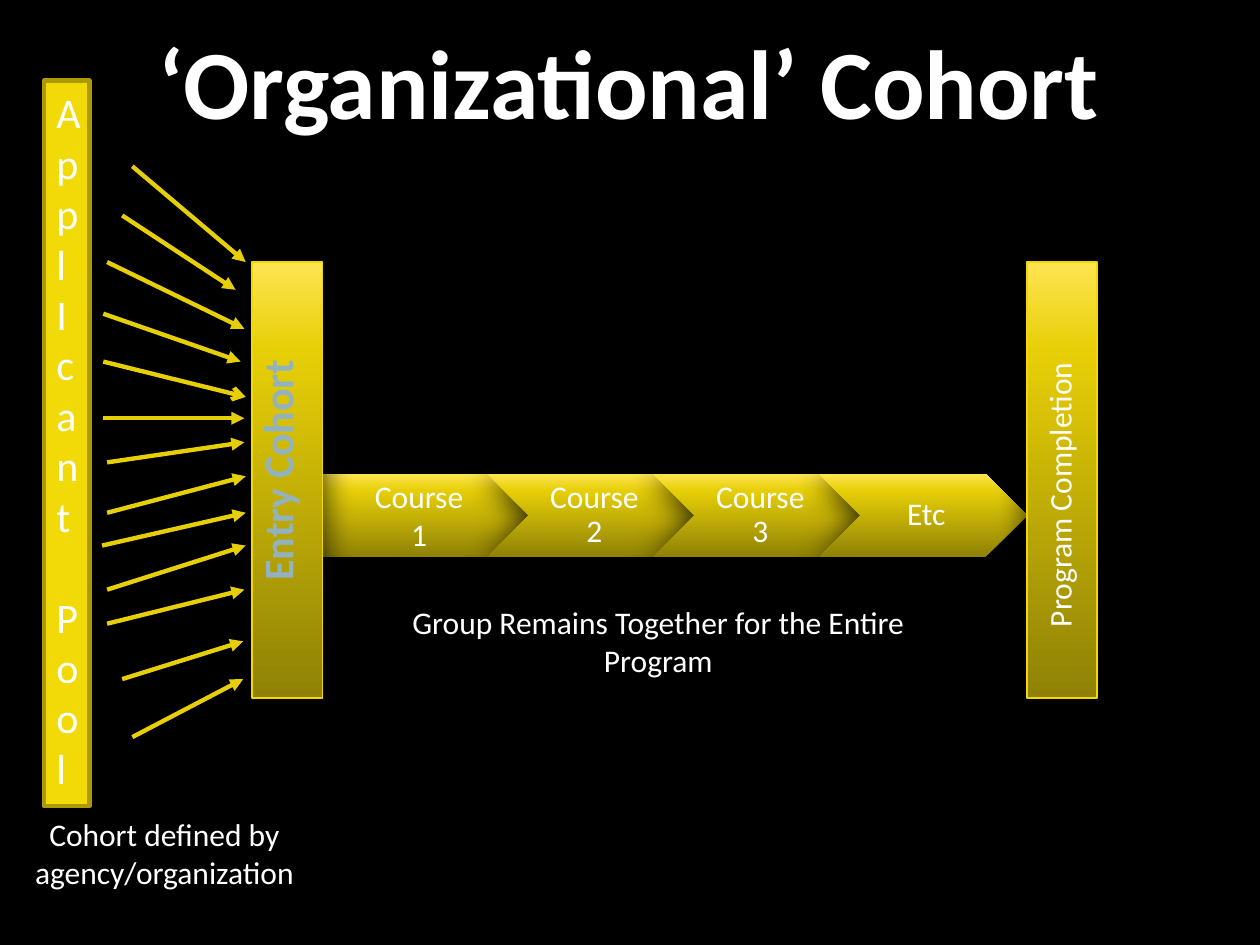
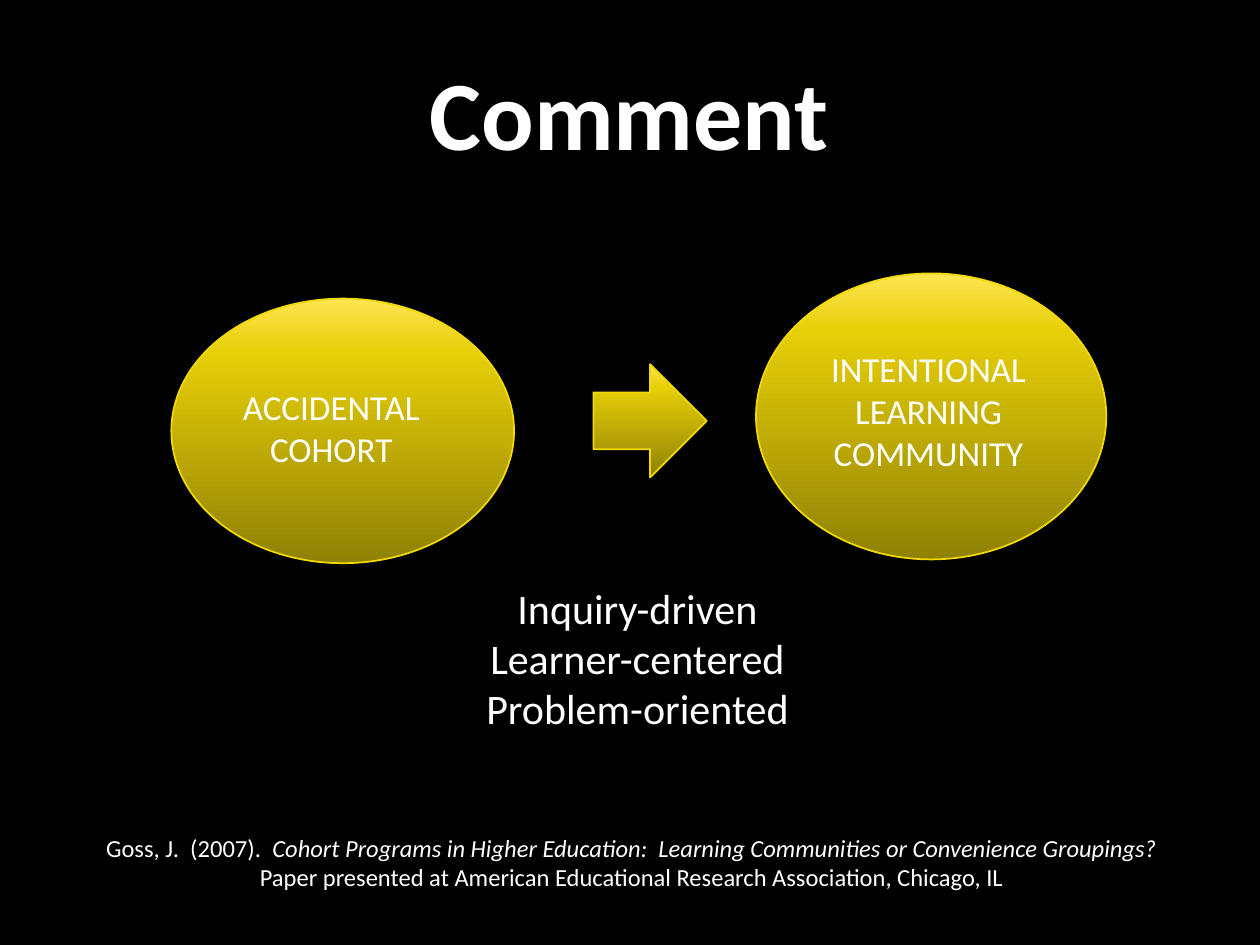
from dataclasses import dataclass
from typing import NamedTuple, Optional

from lxml.etree import SubElement
from pptx import Presentation
from pptx.dml.color import RGBColor
from pptx.enum.shapes import MSO_CONNECTOR, MSO_SHAPE
from pptx.enum.text import MSO_ANCHOR, MSO_AUTO_SIZE, PP_ALIGN
from pptx.oxml import parse_xml
from pptx.oxml.ns import nsdecls, qn
from pptx.util import Inches, Pt

# The page is a grid of 100 columns by 75 rows
WIDTH, HEIGHT = Inches(10), Inches(7.5)
COLUMNS, ROWS = 100, 75


@dataclass(frozen=True)
class Theme:
    font: str = "Calibri"
    background: str = "000000"
    text: str = "FFFFFF"
    accent_text: str = "92B3BE"
    accent_outline: str = "BDD4CB"
    gradient: tuple = ((0, "8F8105"), (80, "E7CF08"), (100, "FFE552"))
    edge: str = "F2D902"
    arrow: str = "E7CF08"
    pool_fill: str = "F2D908"
    pool_edge: str = "AB9A06"
    title_size: int = 56
    large: int = 24
    medium: int = 20
    body: int = 18
    small: int = 14
    thin: float = 1
    thick: float = 2.5


THEME = Theme()


class Area(NamedTuple):
    column: float
    row: float
    columns: float
    rows: float

    def lengths(self) -> tuple:
        return (x_of(self.column), y_of(self.row),
                x_of(self.columns), y_of(self.rows))


class Span(NamedTuple):
    text: str
    italic: bool = False


@dataclass(frozen=True)
class Label:
    area: Area
    paras: tuple  # each para is a string or a tuple of spans
    size: int = THEME.body
    color: str = THEME.text
    bold: bool = False
    align: PP_ALIGN = PP_ALIGN.CENTER
    anchor: MSO_ANCHOR = MSO_ANCHOR.TOP
    left_inset: float = 0.1
    right_inset: float = 0.1
    rotation: int = 0
    line_spacing: float = 1.0
    last_gap: float = 0  # points before the last para
    grow: bool = True


@dataclass(frozen=True)
class Block:
    kind: MSO_SHAPE
    area: Area
    edged: bool = True


class Arrow(NamedTuple):
    start: tuple
    end: tuple
    head: str = "triangle"


def x_of(column: float) -> int:
    return round(WIDTH * column / COLUMNS)


def y_of(row: float) -> int:
    return round(HEIGHT * row / ROWS)


def rgb(color: str) -> RGBColor:
    return RGBColor.from_string(color)


# Drawing functions

def write(shape, label: Label) -> None:
    frame = shape.text_frame
    frame.word_wrap = True
    frame.auto_size = (MSO_AUTO_SIZE.SHAPE_TO_FIT_TEXT if label.grow
                       else MSO_AUTO_SIZE.NONE)
    frame.vertical_anchor = label.anchor
    frame.margin_left = Inches(label.left_inset)
    frame.margin_right = Inches(label.right_inset)
    for index, content in enumerate(label.paras):
        para = frame.add_paragraph() if index else frame.paragraphs[0]
        para.alignment = label.align
        para.line_spacing = label.line_spacing
        if label.last_gap and index == len(label.paras) - 1:
            para.space_before = Pt(label.last_gap)
        spans = (Span(content),) if isinstance(content, str) else content
        for span in spans:
            run = para.add_run()
            run.text = span.text
            run.font.name = THEME.font
            run.font.size = Pt(label.size)
            run.font.bold = label.bold
            run.font.italic = span.italic
            run.font.color.rgb = rgb(label.color)


def add_label(page, label: Label):
    box = page.shapes.add_textbox(*label.area.lengths())
    box.rotation = label.rotation
    write(box, label)
    return box


def add_title(page, text: str, area: Area) -> None:
    add_label(page, Label(area, (text,), THEME.title_size, bold=True,
                          anchor=MSO_ANCHOR.MIDDLE, grow=False))


def add_block(page, block: Block) -> None:
    shape = page.shapes.add_shape(block.kind, *block.area.lengths())
    if block.edged:
        shape.line.color.rgb = rgb(THEME.edge)
        shape.line.width = Pt(THEME.thin)
    else:
        shape.line.fill.background()

    # Three-stop gradient, dark at the bottom
    shape.fill.background()
    properties = shape._element.spPr
    stops = "".join(
        f'<a:gs pos="{place * 1000}"><a:srgbClr val="{color}"/></a:gs>'
        for place, color in THEME.gradient)
    properties.replace(properties.find(qn("a:noFill")), parse_xml(
        f'<a:gradFill {nsdecls("a")} rotWithShape="1"><a:gsLst>{stops}'
        '</a:gsLst><a:lin ang="16200000" scaled="0"/></a:gradFill>'))

    # Soft shadow below
    shape.shadow.inherit = False
    properties.find(qn("a:effectLst")).append(parse_xml(
        f'<a:outerShdw {nsdecls("a")} blurRad="{Pt(18)}" dist="{Pt(3)}" '
        'dir="5400000" rotWithShape="0"><a:srgbClr val="000000">'
        '<a:alpha val="80000"/></a:srgbClr></a:outerShdw>'))


def add_arrow(page, arrow: Arrow) -> None:
    (x1, y1), (x2, y2) = arrow.start, arrow.end
    connector = page.shapes.add_connector(
        MSO_CONNECTOR.STRAIGHT, x_of(x1), y_of(y1), x_of(x2), y_of(y2))
    connector.line.color.rgb = rgb(THEME.arrow)
    connector.line.width = Pt(THEME.thick)
    properties = connector._element.spPr
    SubElement(properties.find(qn("a:ln")), qn("a:tailEnd"), type=arrow.head)
    SubElement(properties, qn("a:effectLst"))


def outline_text(box, color: str) -> None:
    for para in box.text_frame.paragraphs:
        for run in para.runs:
            run.font._element.insert(0, parse_xml(
                f'<a:ln {nsdecls("a")} w="{Pt(THEME.thin)}"><a:solidFill>'
                f'<a:srgbClr val="{color}"/></a:solidFill></a:ln>'))


def add_page(deck):
    page = deck.slides.add_slide(deck.slide_layouts[6])
    page.background.fill.solid()
    page.background.fill.fore_color.rgb = rgb(THEME.background)
    return page


# Slide 1: applicants enter one cohort and move through the courses

COURSE_LEFT, COURSE_TOP, COURSE_STEP = 25.5, 37.6, 13.17
COURSE_WIDTH, COURSE_HEIGHT = 16.5, 6.6
COURSES = (("Course", "1"), ("Course 2",), ("Course 3",), ("Etc",))

ARROWS = (
    Arrow((10.5, 13.2), (19.5, 20.8)),
    Arrow((9.7, 17.1), (18.7, 23)),
    Arrow((8.5, 20.8), (19.4, 26.1)),
    Arrow((8.2, 24.9), (19.1, 28.7)),
    Arrow((8.2, 28.7), (19.5, 31.5), "arrow"),
    Arrow((8.2, 33.2), (19.4, 33.2)),
    Arrow((8.5, 36.7), (19.4, 35.1)),
    Arrow((8.5, 40.7), (19.5, 37.8)),
    Arrow((8.1, 43.3), (19.5, 40.7)),
    Arrow((8.5, 46.8), (19.5, 43.3)),
    Arrow((8.5, 49.5), (19.4, 46.8)),
    Arrow((9.7, 53.9), (19.3, 50.9)),
    Arrow((10.5, 58.5), (19.3, 53.9)),
)


def add_courses(page) -> None:
    notch = COURSE_HEIGHT / 2
    for index, paras in enumerate(COURSES):
        left = COURSE_LEFT + index * COURSE_STEP
        kind = MSO_SHAPE.CHEVRON if index else MSO_SHAPE.PENTAGON
        add_block(page, Block(kind, Area(left, COURSE_TOP, COURSE_WIDTH,
                                         COURSE_HEIGHT), edged=False))
        text_left = left + notch if index else left
        text_width = COURSE_WIDTH - notch * (2 if index else 0.5)
        add_label(page, Label(
            Area(text_left, COURSE_TOP, text_width, COURSE_HEIGHT), paras,
            anchor=MSO_ANCHOR.MIDDLE, left_inset=0.08 if index else 0.1,
            right_inset=0.03, line_spacing=0.9 if index else 1.0, grow=False))


def add_pool(page) -> None:
    label = Label(Area(3.5, 6.4, 3.6, 57.6), ("Appl", "Icant", "Pool"),
                  THEME.large, align=PP_ALIGN.LEFT, last_gap=29)
    pool = page.shapes.add_shape(MSO_SHAPE.RECTANGLE, *label.area.lengths())
    pool.shadow.inherit = False
    pool.fill.solid()
    pool.fill.fore_color.rgb = rgb(THEME.pool_fill)
    pool.line.color.rgb = rgb(THEME.pool_edge)
    pool.line.width = Pt(THEME.thick)
    write(pool, label)


def build_cohort_page(deck) -> None:
    page = add_page(deck)
    add_title(page, "‘Organizational’ Cohort", Area(8.5, 0.9, 82.9, 11))
    add_courses(page)
    for gate_left in (20, 81.5):
        add_block(page, Block(MSO_SHAPE.RECTANGLE,
                              Area(gate_left, 20.8, 5.6, 34.6)))
    entry = add_label(page, Label(
        Area(5.4, 34.8, 33.1, 5), ("Entry Cohort",), THEME.large,
        THEME.accent_text, bold=True, rotation=270))
    outline_text(entry, THEME.accent_outline)
    for arrow in ARROWS:
        add_arrow(page, arrow)
    add_pool(page)
    for label in (
        Label(Area(70, 34.7, 28.1, 4), ("Program Completion",),
              align=PP_ALIGN.LEFT, rotation=270),
        Label(Area(29, 47.4, 46.5, 7.1),
              ("Group Remains Together for the Entire Program",)),
        Label(Area(0, 64.2, 26.1, 7.1),
              ("Cohort defined by agency/organization",)),
    ):
        add_label(page, label)


# Slide 2: from accidental cohort to intentional community

def build_comment_page(deck) -> None:
    page = add_page(deck)
    add_title(page, "Comment", Area(8.5, 1.2, 82.9, 15.3))
    for block in (
        Block(MSO_SHAPE.OVAL, Area(60, 21.7, 27.8, 22.7)),
        Block(MSO_SHAPE.OVAL, Area(13.6, 23.7, 27.2, 21)),
        Block(MSO_SHAPE.RIGHT_ARROW, Area(47.1, 28.9, 9, 9)),
    ):
        add_block(page, block)
    citation = (
        Span("Goss, J.  (2007).  "),
        Span("Cohort Programs in Higher Education:  Learning Communities "
             "or Convenience Groupings? ", italic=True),
        Span("Paper presented at American Educational Research Association, "
             "Chicago, IL"),
    )
    for label in (
        Label(Area(17, 30.1, 18.6, 7.7), ("ACCIDENTAL", "COHORT"),
              THEME.medium),
        Label(Area(64.4, 27.1, 18.6, 11.1),
              ("INTENTIONAL LEARNING COMMUNITY",), THEME.medium),
        Label(Area(34.3, 45.7, 32.6, 13.1),
              ("Inquiry-driven", "Learner-centered", "Problem-oriented"),
              THEME.large),
        Label(Area(5.1, 65.6, 90.1, 5.7), (citation,), THEME.small),
    ):
        add_label(page, label)


def main() -> None:
    deck = Presentation()
    deck.slide_width, deck.slide_height = WIDTH, HEIGHT
    build_cohort_page(deck)
    build_comment_page(deck)
    deck.save("out.pptx")


if __name__ == "__main__":
    main()
